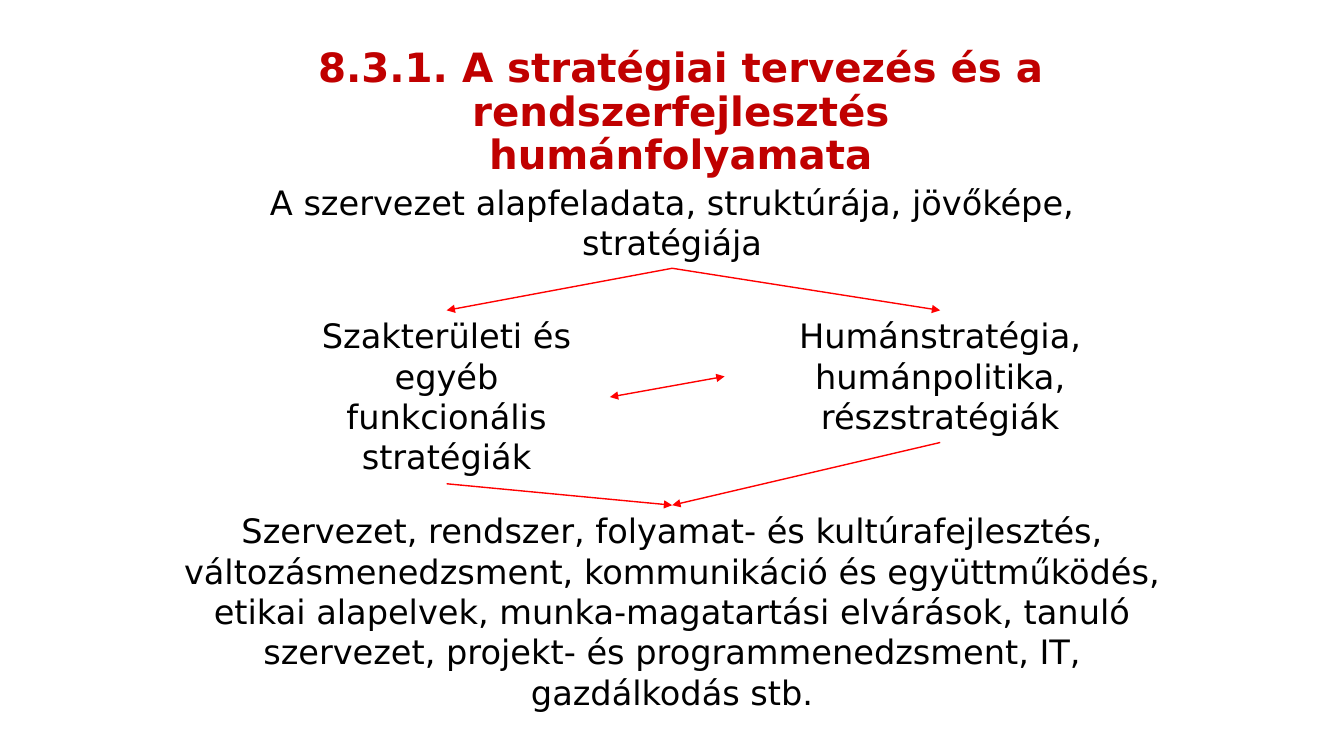
"""Build the slide on strategic planning and the human process of system development."""
from lxml import etree
from pptx import Presentation
from pptx.dml.color import RGBColor
from pptx.enum.shapes import MSO_CONNECTOR
from pptx.enum.text import MSO_ANCHOR, MSO_AUTO_SIZE, PP_ALIGN
from pptx.oxml.ns import qn
from pptx.util import Cm, Pt

STRAIGHT = MSO_CONNECTOR.STRAIGHT
CENTER = PP_ALIGN.CENTER
MIDDLE = MSO_ANCHOR.MIDDLE
GROW = MSO_AUTO_SIZE.SHAPE_TO_FIT_TEXT
TOP, LEFT, BOTTOM, RIGHT = range(4)
FONT = "DejaVu Sans"
COLORS = {"title": "C00000", "text": "000000", "arrow": "FF0000"}


def add_text(slide, text, area, size=24, color="text"):
    """Add a centred, wrapping text box and return it."""
    box = slide.shapes.add_textbox(*(Cm(n) for n in area))
    box.text_frame.word_wrap = True
    para = box.text_frame.paragraphs[0]
    para.text = text
    para.alignment = CENTER
    para.font.name = FONT
    para.font.size = Pt(size)
    para.font.color.rgb = RGBColor.from_string(COLORS[color])
    return box


def add_title(slide, text, area):
    """Add the bold title."""
    frame = add_text(slide, text, area, 28.8, "title").text_frame
    frame.vertical_anchor = MIDDLE
    frame.paragraphs[0].font.bold = True
    frame.paragraphs[0].line_spacing = 0.9


def add_block(slide, text, area):
    """Add a body text box that grows with its text."""
    box = add_text(slide, text, area)
    box.text_frame.auto_size = GROW
    return box


def add_arrow(slide, start, side, end, goal, ends=("tailEnd",)):
    """Join the sides of two boxes with an arrow."""
    line = slide.shapes.add_connector(STRAIGHT, 0, 0, 0, 0)
    line.begin_connect(start, side)
    line.end_connect(end, goal)
    line.line.width = Pt(1)
    line.line.color.rgb = RGBColor.from_string(COLORS["arrow"])
    stroke = line.line._get_or_add_ln()
    for tag in ends:
        etree.SubElement(stroke, qn(f"a:{tag}"), type="triangle")
    etree.SubElement(line._element.spPr, qn("a:effectLst"))


def main():
    """Build and save the slide."""
    deck = Presentation()
    deck.slide_width, deck.slide_height = Cm(33.87), Cm(19.05)
    slide = deck.slides.add_slide(deck.slide_layouts[6])

    add_title(slide, "8.3.1. A stratégiai tervezés és a rendszerfejlesztés humánfolyamata",
              (7.14, 1.09, 20.04, 3.53))
    base = add_block(slide, "A szervezet alapfeladata, struktúrája, jövőképe, stratégiája",
                     (4.24, 4.45, 25.4, 2.31))
    field = add_block(slide, "Szakterületi és egyéb funkcionális stratégiák",
                      (7.14, 7.82, 8.23, 4.37))
    human = add_block(slide, "Humánstratégia, humánpolitika, részstratégiák",
                      (18.26, 7.82, 10.87, 3.33))
    result = add_block(
        slide,
        "Szervezet, rendszer, folyamat- és kultúrafejlesztés, változásmenedzsment, "
        "kommunikáció és együttműködés, etikai alapelvek, munka-magatartási elvárások, "
        "tanuló szervezet, projekt- és programmenedzsment, IT, gazdálkodás stb.",
        (4.24, 12.73, 25.4, 5.38))

    add_arrow(slide, field, RIGHT, human, LEFT, ("headEnd", "tailEnd"))
    for branch in (field, human):
        add_arrow(slide, base, BOTTOM, branch, TOP)
        add_arrow(slide, branch, BOTTOM, result, TOP)
    deck.save("out.pptx")


if __name__ == "__main__":
    main()
